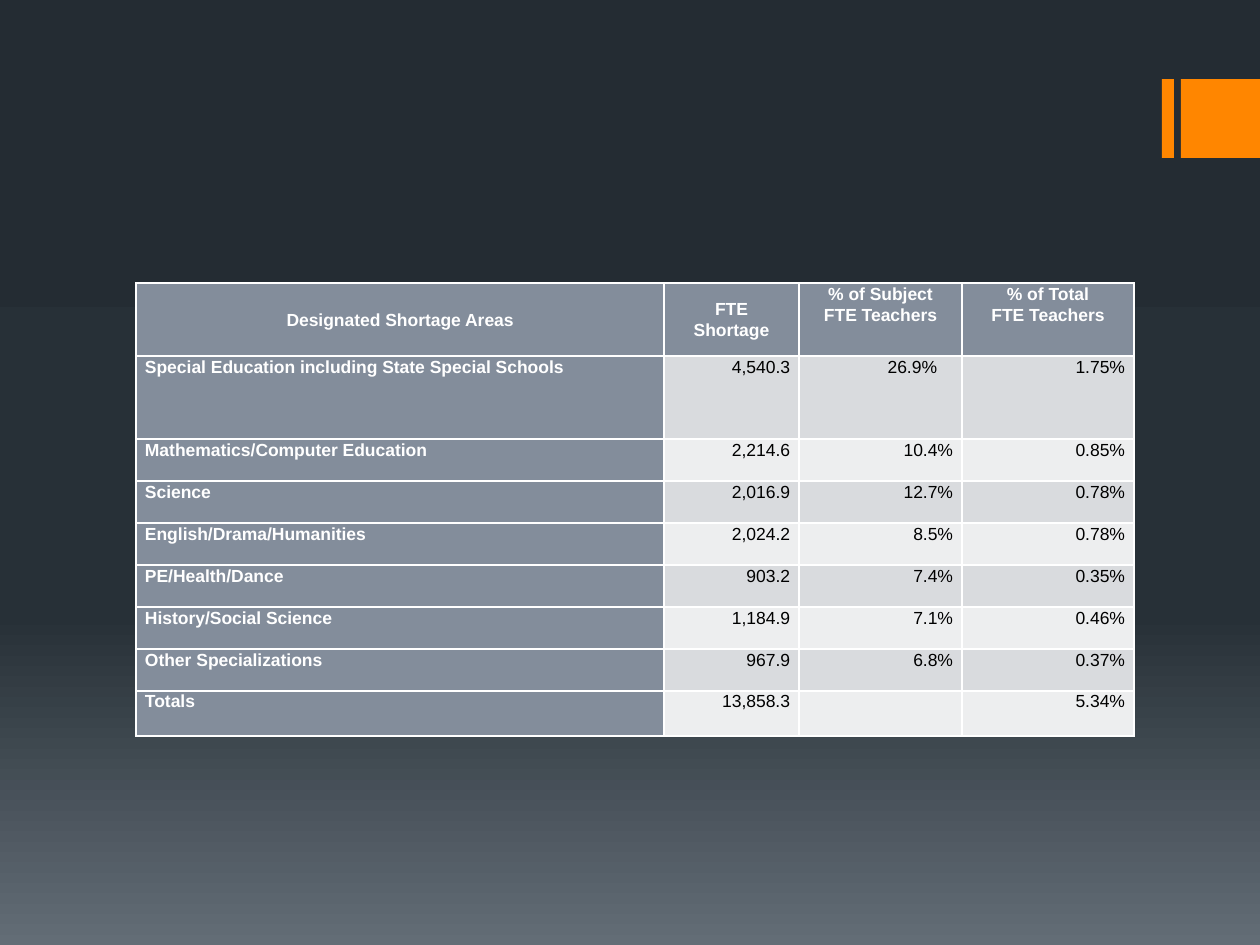
import copy
import pptx
import pptx.util
import pptx.dml.color
import pptx.enum.shapes
import pptx.enum.text

PX = 914400 / 126
COLORS = {
    "top": "242C33", "middle": "273037", "bottom": "636D76",
    "accent": "FF8600", "header": "838D9B", "odd": "D9DBDE", "even": "EDEEEF",
    "white": "FFFFFF", "black": "000000",
}
ROWS = [
    ("Designated Shortage Areas", "FTE\nShortage", "% of Subject\nFTE Teachers", "% of Total\nFTE Teachers"),
    ("Special Education including State Special Schools", "4,540.3", "26.9%", "1.75%"),
    ("Mathematics/Computer Education", "2,214.6", "10.4%", "0.85%"),
    ("Science", "2,016.9", "12.7%", "0.78%"),
    ("English/Drama/Humanities", "2,024.2", "8.5%", "0.78%"),
    ("PE/Health/Dance", "903.2", "7.4%", "0.35%"),
    ("History/Social Science", "1,184.9", "7.1%", "0.46%"),
    ("Other Specializations", "967.9", "6.8%", "0.37%"),
    ("Totals", "13,858.3", "", "5.34%"),
]
WIDTHS = [528, 135, 163, 172]
HEIGHTS = [73, 83] + [42] * 6 + [45]
ALIGN = pptx.enum.text.PP_ALIGN
ANCHOR = pptx.enum.text.MSO_ANCHOR


def px(n):
    return pptx.util.Emu(round(n * PX))


def color(name):
    return pptx.dml.color.RGBColor.from_string(COLORS[name])


prs = pptx.Presentation()
prs.slide_width, prs.slide_height = px(1260), px(945)
s = prs.slides.add_slide(prs.slide_layouts[6])

fill = s.background.fill
fill.gradient()
fill.gradient_angle = 270
stops = s.element.xpath(".//a:gsLst")[0]
stops.append(copy.deepcopy(stops[-1]))
for stop, (position, name) in zip(fill.gradient_stops, [(0, "top"), (0.65, "middle"), (1, "bottom")]):
    stop.position = position
    stop.color.rgb = color(name)

for left, width in [(1162, 12), (1181, 79)]:
    sp = s.shapes.add_shape(pptx.enum.shapes.MSO_SHAPE.RECTANGLE, px(left), px(79), px(width), px(79))
    sp.shadow.inherit = False
    sp.fill.solid()
    sp.fill.fore_color.rgb = color("accent")
    sp.line.fill.background()

table = s.shapes.add_table(len(ROWS), len(WIDTHS), px(136), px(283), px(sum(WIDTHS)), px(sum(HEIGHTS))).table
table.first_col = True
for column, width in zip(table.columns, WIDTHS):
    column.width = px(width)
for row, height in zip(table.rows, HEIGHTS):
    row.height = px(height)

for i, values in enumerate(ROWS):
    for j, value in enumerate(values):
        cell = table.cell(i, j)
        heading = i == 0 or j == 0
        cell.fill.solid()
        cell.fill.fore_color.rgb = color("header" if heading else "odd" if i % 2 else "even")
        cell.margin_left = cell.margin_right = px(9)
        cell.margin_top = cell.margin_bottom = 0
        cell.vertical_anchor = ANCHOR.MIDDLE if i == 0 and j < 2 else ANCHOR.TOP
        cell.text = value
        for p in cell.text_frame.paragraphs:
            p.alignment = ALIGN.CENTER if i == 0 else ALIGN.LEFT if j == 0 else ALIGN.RIGHT
            p.line_spacing = 1.15 if i == j == 0 else pptx.util.Pt(12)
            p.font.name = "Arial"
            p.font.size = pptx.util.Pt(10)
            p.font.bold = heading
            p.font.color.rgb = color("white" if heading else "black")
table.cell(1, 2).margin_right = px(25)

prs.save("out.pptx")
